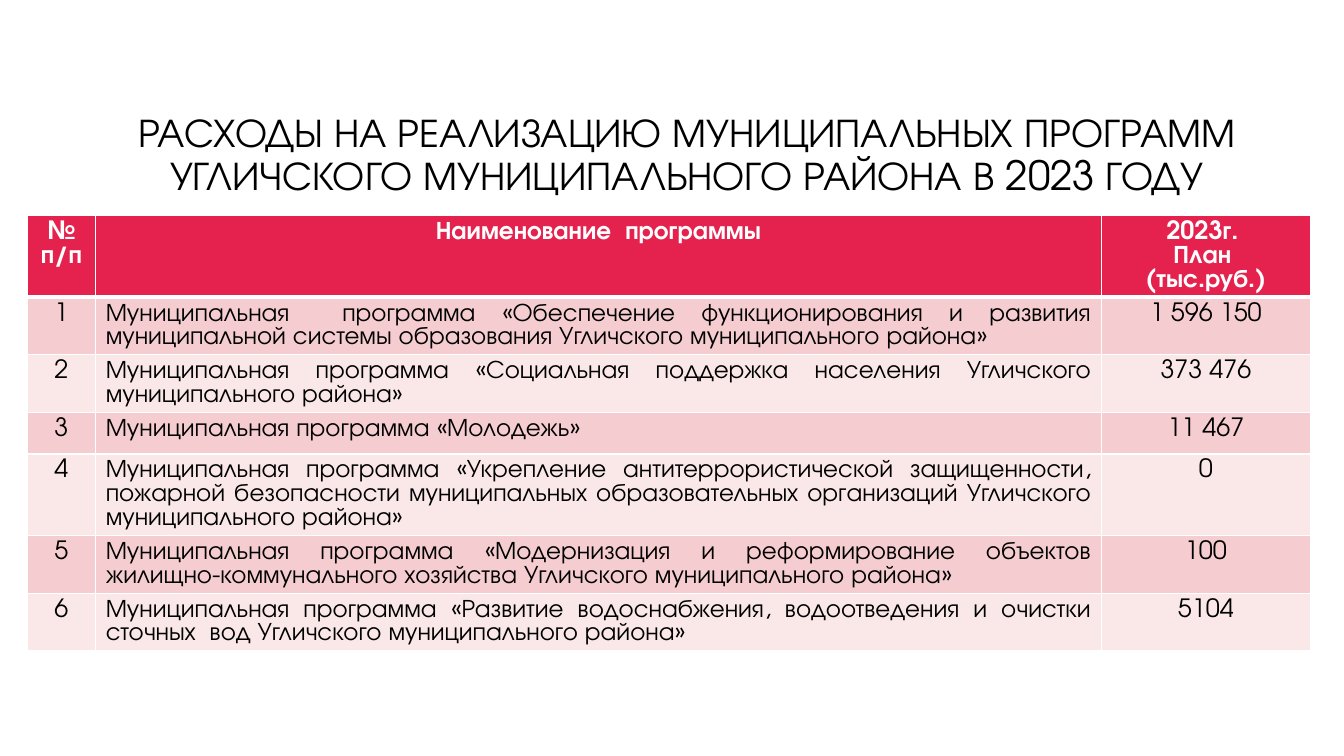
from pptx import Presentation
from pptx.dml.color import RGBColor
from pptx.enum.text import MSO_ANCHOR as Anchor, PP_ALIGN as Align
from pptx.oxml import parse_xml
from pptx.oxml.ns import nsdecls
from pptx.util import Pt

# Content
TITLE = ("РАСХОДЫ НА РЕАЛИЗАЦИЮ МУНИЦИПАЛЬНЫХ ПРОГРАММ "
         "УГЛИЧСКОГО МУНИЦИПАЛЬНОГО РАЙОНА В 2023 ГОДУ")
HEAD = ("№ п/п", "Наименование  программы", "2023г. \nПлан \n(тыс.руб.)")
PLANS = [
    ("Муниципальная  программа «Обеспечение функционирования и развития "
     "муниципальной системы образования Угличского муниципального района»", "1 596 150"),
    ("Муниципальная программа «Социальная поддержка населения Угличского "
     "муниципального района»", "373 476"),
    ("Муниципальная программа «Молодежь»", "11 467"),
    ("Муниципальная программа «Укрепление антитеррористической защищенности, "
     "пожарной безопасности муниципальных образовательных организаций Угличского "
     "муниципального района»", "0"),
    ("Муниципальная программа «Модернизация и реформирование объектов "
     "жилищно-коммунального хозяйства Угличского муниципального района»", "100"),
    ("Муниципальная программа «Развитие водоснабжения, водоотведения и очистки "
     "сточных  вод Угличского муниципального района»", "5104"),
]

# Style
FONT = "TeX Gyre Adventor"
BLACK = RGBColor(0, 0, 0)
WHITE = RGBColor(255, 255, 255)
RED = RGBColor(0xE5, 0x22, 0x4E)
BANDS = (RGBColor(0xFA, 0xE8, 0xE9), RGBColor(0xF5, 0xCD, 0xD0))
WIDTHS = (49, 718.5, 149)
ROW = 29.5


def style(par, size, color, align, bold=False):
    par.alignment = align
    font = par.font
    font.name, font.size, font.bold = FONT, Pt(size), bold
    font.color.rgb = color


def edge(cell, side, width):
    line = parse_xml(
        f'<a:{side} {nsdecls("a")} w="{Pt(width)}"><a:solidFill>'
        f'<a:srgbClr val="{WHITE}"/></a:solidFill></a:{side}>')
    props = cell._tc.get_or_add_tcPr()
    props.insert(len(props) - 1, line)  # borders stand before the fill


deck = Presentation()
deck.slide_width, deck.slide_height = Pt(960), Pt(540)
slide = deck.slides.add_slide(deck.slide_layouts[5])

# Title
title = slide.shapes.title
title.left, title.top, title.width, title.height = Pt(54.7), Pt(60.5), Pt(872), Pt(101.5)
frame = title.text_frame
frame.text = TITLE
frame.word_wrap = True
frame.vertical_anchor = Anchor.MIDDLE
style(frame.paragraphs[0], 28.8, BLACK, Align.CENTER)
frame.paragraphs[0].line_spacing = 0.9

# Table
rows = [HEAD] + [(str(n), *plan) for n, plan in enumerate(PLANS, 1)]
table = slide.shapes.add_table(len(rows), len(HEAD), Pt(19.4), Pt(154),
                               Pt(sum(WIDTHS)), Pt(ROW * len(rows))).table
for col, width in zip(table.columns, WIDTHS):
    col.width = Pt(width)
for r, row in enumerate(rows):
    table.rows[r].height = Pt(ROW)
    head = r == 0
    for c, text in enumerate(row):
        cell = table.cell(r, c)
        cell.text = text
        cell.fill.solid()
        cell.fill.fore_color.rgb = RED if head else BANDS[r % 2]
        for side in ("lnL", "lnR", "lnT", "lnB"):
            thick = (head and side == "lnB") or (r == 1 and side == "lnT")
            edge(cell, side, 3 if thick else 1)
        align = Align.JUSTIFY if c == 1 and not head else Align.CENTER
        for par in cell.text_frame.paragraphs:
            style(par, 18, WHITE if head else BLACK, align, head)
            par.line_spacing = Pt(17)

deck.save("out.pptx")
